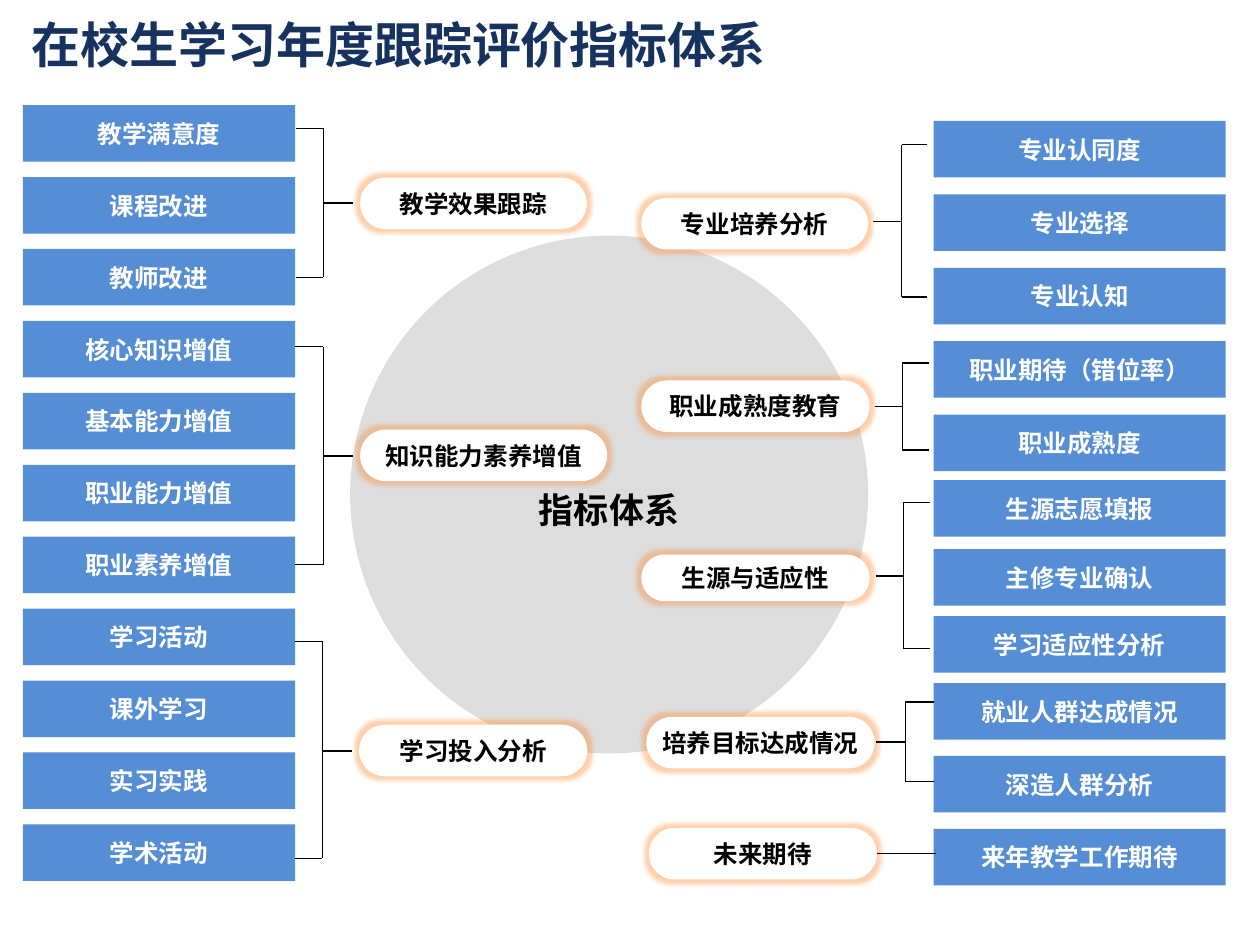
from lxml import etree
from pptx import Presentation
from pptx.dml.color import RGBColor
from pptx.enum.shapes import MSO_CONNECTOR, MSO_SHAPE
from pptx.enum.text import MSO_ANCHOR, PP_ALIGN
from pptx.oxml.ns import qn
from pptx.util import Cm, Pt

STRAIGHT = MSO_CONNECTOR.STRAIGHT
RECT, PILL, OVAL = MSO_SHAPE.RECTANGLE, MSO_SHAPE.ROUNDED_RECTANGLE, MSO_SHAPE.OVAL
MIDDLE, CENTER = MSO_ANCHOR.MIDDLE, PP_ALIGN.CENTER
rgb = RGBColor.from_string
CJK = "Noto Sans CJK SC"


def add_block(kind, x, y, w, h, fill, text, color, size=14, font="Calibri"):
    if kind is None:
        sp = s.shapes.add_textbox(Cm(x), Cm(y), Cm(w), Cm(h))
    else:
        sp = s.shapes.add_shape(kind, Cm(x), Cm(y), Cm(w), Cm(h))
        sp.shadow.inherit = False
        sp.fill.solid()
        sp.fill.fore_color.rgb = rgb(fill)
        sp.line.fill.background()
    tf = sp.text_frame
    tf.text = text
    tf.word_wrap = kind is None
    tf.vertical_anchor = MIDDLE
    p = tf.paragraphs[0]
    if kind is not None:
        p.alignment = CENTER
    r = p.runs[0]
    r.font.name = font
    r.font.size = Pt(size)
    r.font.bold = True
    r.font.color.rgb = rgb(color)
    etree.SubElement(r.font._element, qn("a:ea"), typeface=font)
    return sp


def add_line(shapes, x1, y1, x2, y2):
    c = shapes.add_connector(STRAIGHT, Cm(x1), Cm(y1), Cm(x2), Cm(y2))
    c.line.color.rgb = rgb("000000")
    c.line.width = Pt(0.75)
    etree.SubElement(c._element.spPr, qn("a:effectLst"))
    return c


prs = Presentation()
prs.slide_width, prs.slide_height = Cm(25.4), Cm(19.05)
s = prs.slides.add_slide(prs.slide_layouts[6])

circle = add_block(OVAL, 7.06, 4.75, 10.44, 10.44, "DDDDDD", "指标体系", "000000", 20, CJK)
circle.text_frame.margin_top = Cm(0.73)

left_items = ["教学满意度", "课程改进", "教师改进", "核心知识增值", "基本能力增值", "职业能力增值",
              "职业素养增值", "学习活动", "课外学习", "实习实践", "学术活动"]
for i, text in enumerate(left_items):
    add_block(RECT, 0.46, 2.12 + 1.45 * i, 5.49, 1.14, "558ED5", text, "FFFFFF")

right_items = [
    ("专业认同度", 2.44), ("专业选择", 3.92), ("专业认知", 5.4),
    ("职业期待（错位率）", 6.88), ("职业成熟度", 8.36),
    ("生源志愿填报", 9.68), ("主修专业确认", 11.07), ("学习适应性分析", 12.42),
    ("就业人群达成情况", 13.77), ("深造人群分析", 15.24), ("来年教学工作期待", 16.71),
]
for text, y in right_items:
    add_block(RECT, 18.82, y, 5.89, 1.14, "558ED5", text, "FFFFFF")

categories = [
    ("教学效果跟踪", 7.26, 3.58, 4.57, 1.04),
    ("知识能力素养增值", 7.26, 8.66, 4.98, 1.04),
    ("学习投入分析", 7.24, 14.61, 4.6, 1.04),
    ("专业培养分析", 12.93, 3.99, 4.57, 1.04),
    ("职业成熟度教育", 12.93, 7.67, 4.6, 1.04),
    ("生源与适应性", 12.93, 11.18, 4.6, 0.94),
    ("培养目标达成情况", 13.03, 14.45, 4.6, 1.04),
    ("未来期待", 13.08, 16.69, 4.6, 1.04),
]
for text, x, y, w, h in categories:
    pill = add_block(PILL, x, y, w, h, "FFFFFF", text, "000000")
    pill.adjustments[0] = 0.5
    effects = pill._element.spPr.find(qn("a:effectLst"))
    glow = etree.SubElement(effects, qn("a:glow"), rad="63500")
    clr = etree.SubElement(glow, qn("a:srgbClr"), val="FF8A30")
    etree.SubElement(clr, qn("a:alpha"), val="40000")

future = add_line(s.shapes, 17.68, 17.21, 18.87, 17.21)
future.begin_connect(pill, 3)

brackets = [
    (7.11, 6.52, 5.97, 4.09, 2.59, 5.59),
    (7.11, 6.52, 5.95, 9.19, 6.99, 11.38),
    (7.09, 6.5, 5.95, 15.14, 12.93, 17.3),
    (17.6, 18.18, 18.69, 4.47, 2.92, 5.99),
    (17.63, 18.19, 18.72, 8.2, 7.32, 9.07),
    (17.65, 18.21, 18.75, 11.61, 10.13, 13.08),
    (17.65, 18.25, 18.82, 14.96, 14.15, 15.75),
]
for stem, spine, tip, mid, top, bottom in brackets:
    group = s.shapes.add_group_shape()
    add_line(group.shapes, stem, mid, spine, mid)
    add_line(group.shapes, tip, top, spine, top)
    add_line(group.shapes, tip, bottom, spine, bottom)
    add_line(group.shapes, spine, top, spine, bottom)

title = add_block(None, 0.64, 0.28, 19.33, 1.19, None, "在校生学习年度跟踪评价指标体系", "15335E", 28, CJK)
tf = title.text_frame
tf.margin_left = tf.margin_right = tf.margin_top = tf.margin_bottom = Cm(0)

prs.save("out.pptx")
